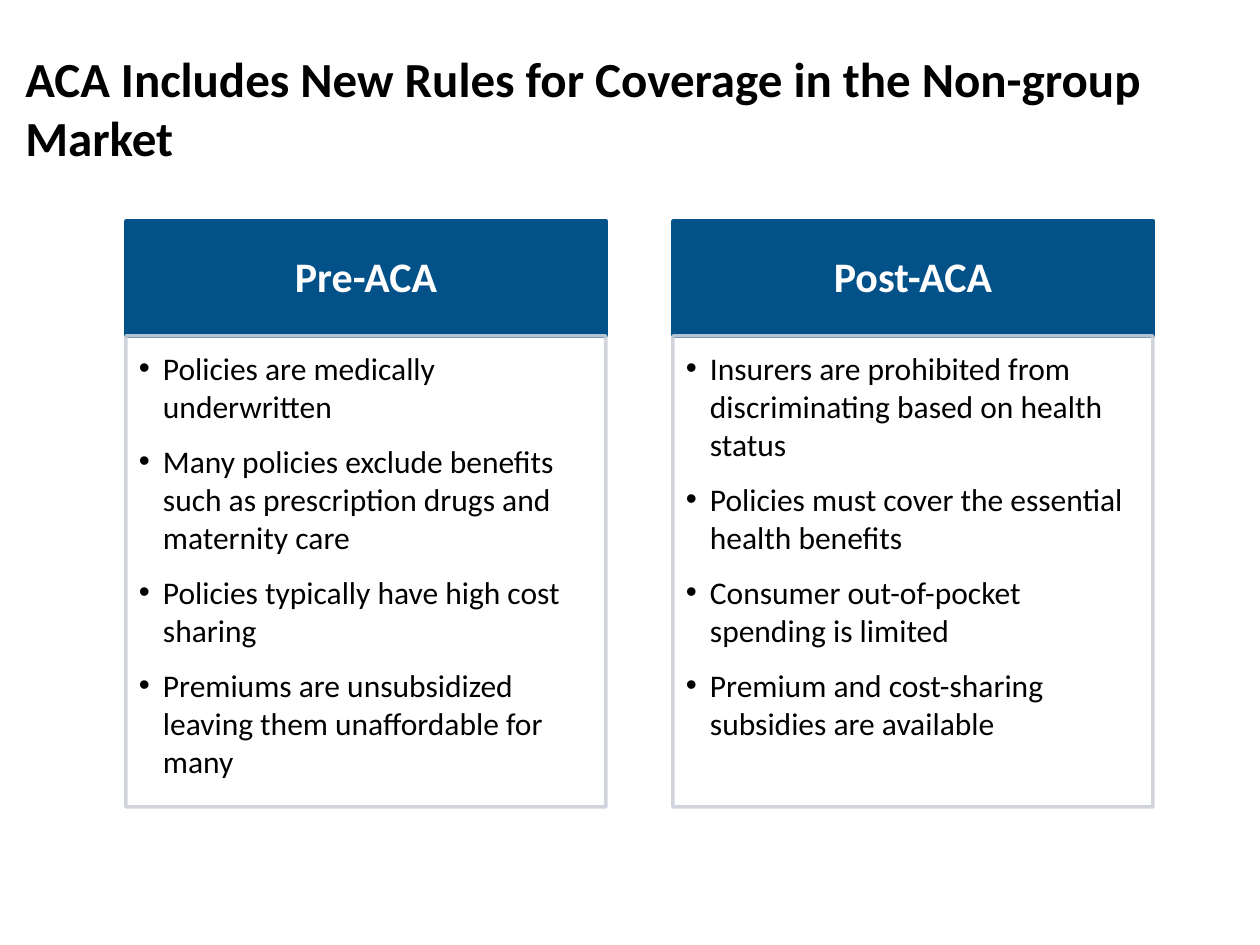
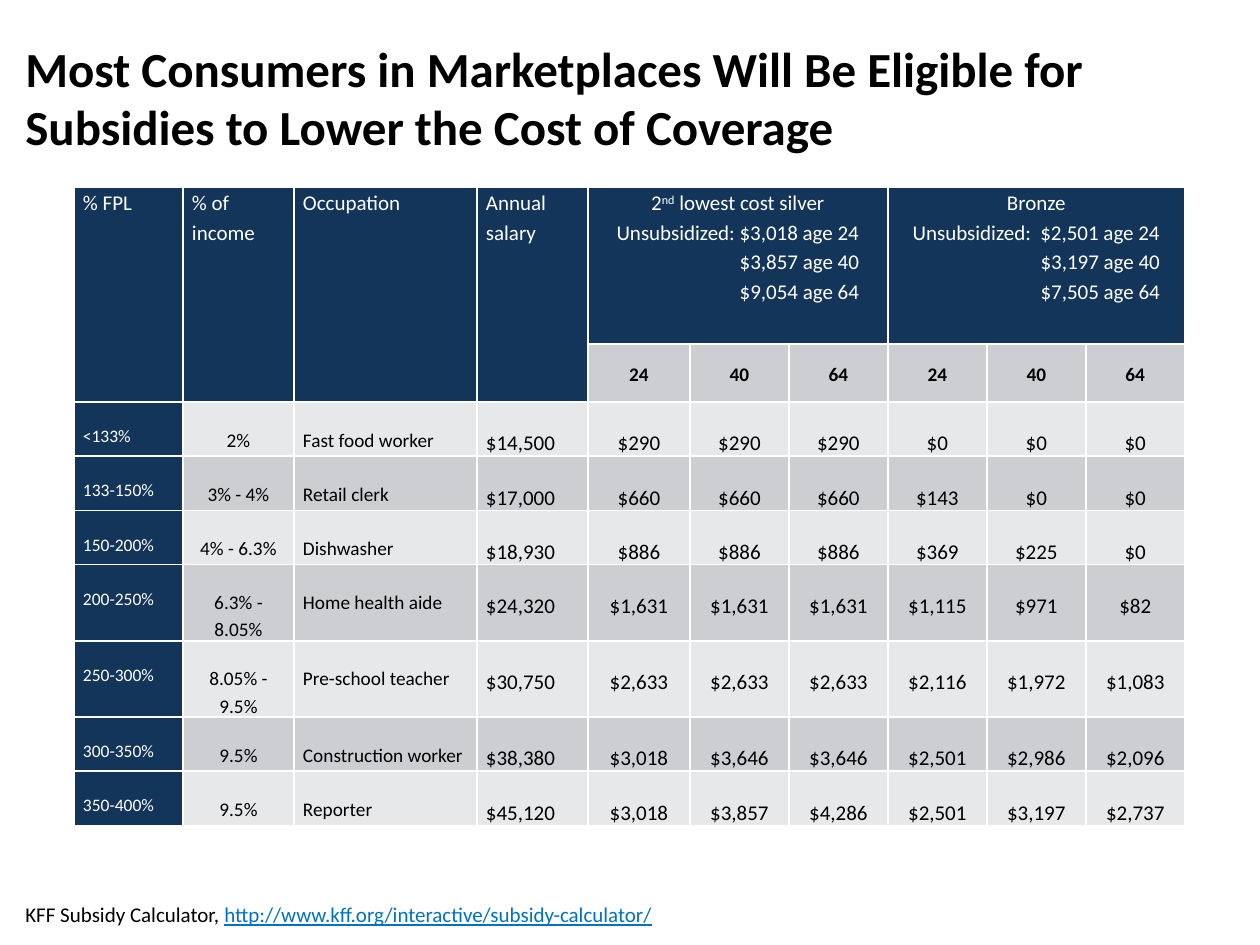
from itertools import zip_longest
from lxml.etree import SubElement
from pptx import Presentation
from pptx.dml.color import RGBColor
from pptx.enum.shapes import MSO_SHAPE
from pptx.enum.text import MSO_ANCHOR, PP_ALIGN
from pptx.oxml.ns import qn
from pptx.util import Pt

SCALE = 914400 / 126
FONT = "Calibri"
BLACK, WHITE = "000000", "FFFFFF"
BLUE, EDGE, LINK = "025189", "CCD0DA", "0072C0"
NAVY, DARK, LIGHT = "133559", "CCCED1", "E7E8EA"
LEFT, CENTER = PP_ALIGN.LEFT, PP_ALIGN.CENTER
TOP, MIDDLE, BOTTOM = MSO_ANCHOR.TOP, MSO_ANCHOR.MIDDLE, MSO_ANCHOR.BOTTOM

CARDS = [
    ("Pre-ACA", [
        "Policies are medically underwritten",
        "Many policies exclude benefits such as prescription drugs and maternity care",
        "Policies typically have high cost sharing",
        "Premiums are unsubsidized leaving them unaffordable for many"]),
    ("Post-ACA", [
        "Insurers are prohibited from discriminating based on health status",
        "Policies must cover the essential health benefits",
        "Consumer out-of-pocket spending is limited",
        "Premium and cost-sharing subsidies are available"]),
]
HEADS = ["% FPL", "% of income", "Occupation", "Annual salary"]
PLANS = [
    (4, 123, [["2", ("nd", {"raised": True}), " lowest cost silver"],
              "Unsubsidized: $3,018 age 24", "$3,857 age 40", "$9,054 age 64"]),
    (7, 128, ["Bronze", "Unsubsidized:  $2,501 age 24", "$3,197 age 40", "$7,505 age 64"]),
]
AGES = ["24", "40", "64"] * 2
ROWS = [
    ["<133%", "2%", "Fast food worker", "$14,500",
     "$290", "$290", "$290", "$0", "$0", "$0"],
    ["133-150%", "3% - 4%", "Retail clerk", "$17,000",
     "$660", "$660", "$660", "$143", "$0", "$0"],
    ["150-200%", "4% - 6.3%", "Dishwasher", "$18,930",
     "$886", "$886", "$886", "$369", "$225", "$0"],
    ["200-250%", "6.3% - 8.05%", "Home health aide", "$24,320",
     "$1,631", "$1,631", "$1,631", "$1,115", "$971", "$82"],
    ["250-300%", "8.05% - 9.5%", "Pre-school teacher", "$30,750",
     "$2,633", "$2,633", "$2,633", "$2,116", "$1,972", "$1,083"],
    ["300-350%", "9.5%", "Construction worker", "$38,380",
     "$3,018", "$3,646", "$3,646", "$2,501", "$2,986", "$2,096"],
    ["350-400%", "9.5%", "Reporter", "$45,120",
     "$3,018", "$3,857", "$4,286", "$2,501", "$3,197", "$2,737"],
]
WIDTHS = [109, 111, 183, 111, 102] + [99] * 5
HEIGHTS = [157, 58, 54, 54, 54, 76, 76, 54, 54]


def px(length):
    """Turn pixels into EMU."""
    return round(length * SCALE)


def rgb(color):
    """Turn a hex string into a colour."""
    return RGBColor.from_string(color)


def inset(holder, left, top, right, bottom):
    """Set the four inner margins of a frame or cell."""
    holder.margin_left, holder.margin_top = px(left), px(top)
    holder.margin_right, holder.margin_bottom = px(right), px(bottom)


def write(frame, lines, size=12, color=BLACK, bold=False, align=LEFT,
          space=None, after=0, bullet=0, indents=()):
    """Fill a frame with paragraphs, each a string or a list of runs."""
    for order, (line, indent) in enumerate(zip_longest(lines, indents, fillvalue=0)):
        para = frame.add_paragraph() if order else frame.paragraphs[0]
        props = para._p.get_or_add_pPr()
        if bullet or indent:
            props.set("marL", str(px(bullet or indent)))
        if bullet:
            props.set("indent", str(-px(bullet)))
            SubElement(props, qn("a:buFont")).set("typeface", "Arial")
            SubElement(props, qn("a:buChar")).set("char", "•")
        para.alignment, para.space_after = align, Pt(after)
        para.line_spacing = space
        for part in [line] if isinstance(line, str) else line:
            words, extra = (part, {}) if isinstance(part, str) else part
            run = para.add_run()
            run.text = words
            font = run.font
            font.name, font.size, font.bold = FONT, Pt(size), bold
            font.color.rgb = rgb(extra.get("color", color))
            if extra.get("under"):
                font.underline = True
            if extra.get("raised"):
                run._r.get_or_add_rPr().set("baseline", "30000")


def add_text(slide, box, lines, anchor=TOP, **style):
    """Add a wrapped text box."""
    frame = slide.shapes.add_textbox(*map(px, box)).text_frame
    frame.word_wrap, frame.vertical_anchor = True, anchor
    write(frame, lines, **style)


def add_title(slide, top, title):
    """Add the slide title."""
    add_text(slide, (13, top, 1235, 126), [title], size=28, bold=True)


def add_panel(slide, box, lines, edge, fill=None, alpha=100, anchor=TOP,
              margins=(13, 13, 18, 20), **style):
    """Add an outlined rectangle holding text."""
    panel = slide.shapes.add_shape(MSO_SHAPE.RECTANGLE, *map(px, box))
    panel.shadow.inherit = False
    if fill:
        panel.fill.solid()
        panel.fill.fore_color.rgb = rgb(fill)
    else:
        panel.fill.background()
    panel.line.color.rgb, panel.line.width = rgb(edge), Pt(2)
    if alpha < 100:
        tint = panel.line._ln.find(".//" + qn("a:srgbClr"))
        SubElement(tint, qn("a:alpha")).set("val", str(alpha * 1000))
    frame = panel.text_frame
    frame.word_wrap, frame.vertical_anchor = True, anchor
    inset(frame, *margins)
    write(frame, lines, **style)


def add_card(slide, left, head, points):
    """Add a heading band above a bulleted panel."""
    add_panel(slide, (left, 221, 480, 115), [head], BLUE, fill=BLUE, anchor=MIDDLE,
              margins=(24, 14, 24, 14), size=24, color=WHITE, bold=True,
              align=CENTER, space=0.9)
    add_panel(slide, (left, 336, 480, 471), points, EDGE, alpha=90,
              size=18, after=10, bullet=24)


def set_cell(cell, lines, fill, top=0, anchor=TOP, **style):
    """Fill a table cell and rule it in white."""
    inset(cell, 9, top, 9, 0)
    cell.vertical_anchor = anchor
    props = cell._tc.get_or_add_tcPr()
    for side in ("lnL", "lnR", "lnT", "lnB"):
        rule = SubElement(props, qn("a:" + side), w=str(Pt(1)))
        paint = SubElement(rule, qn("a:solidFill"))
        SubElement(paint, qn("a:srgbClr")).set("val", WHITE)
    cell.fill.solid()
    cell.fill.fore_color.rgb = rgb(fill)
    write(cell.text_frame, lines, space=1.15, **style)


def add_costs(slide):
    """Add the table of premiums by income and age."""
    table = slide.shapes.add_table(len(HEIGHTS), len(WIDTHS), px(74), px(187),
                                   px(sum(WIDTHS)), px(sum(HEIGHTS))).table
    for column, width in zip(table.columns, WIDTHS):
        column.width = px(width)
    for row, height in zip(table.rows, HEIGHTS):
        row.height = px(height)
    for col, head in enumerate(HEADS):
        table.cell(0, col).merge(table.cell(1, col))
        set_cell(table.cell(0, col), [head], NAVY, color=WHITE)
    for col, shift, lines in PLANS:
        table.cell(0, col).merge(table.cell(0, col + 2))
        set_cell(table.cell(0, col), lines, NAVY, color=WHITE, align=CENTER,
                 indents=(0, 0, shift, shift))
    for col, age in enumerate(AGES, len(HEADS)):
        set_cell(table.cell(1, col), [age], DARK, anchor=MIDDLE,
                 size=11, bold=True, align=CENTER)
    for row, values in enumerate(ROWS, 2):
        band = DARK if row % 2 else LIGHT
        for col, value in enumerate(values):
            size = (10, 11, 11)[col] if col < 3 else 12
            set_cell(table.cell(row, col), [value], band if col else NAVY,
                     top=size * 2.1, size=size, color=BLACK if col else WHITE,
                     align=LEFT if col in (0, 2, 3) else CENTER)


def main():
    """Build both slides and save them."""
    deck = Presentation()
    deck.slide_width, deck.slide_height = px(1260), px(945)
    rules, costs = [deck.slides.add_slide(deck.slide_layouts[6]) for _ in range(2)]

    for order, (head, points) in enumerate(CARDS):
        add_card(rules, 126 + 547 * order, head, points)
    add_title(rules, 42, "ACA Includes New Rules for Coverage in the Non-group Market")

    add_costs(costs)
    link = ("http://www.kff.org/interactive/subsidy-calculator/",
            {"color": LINK, "under": True})
    add_text(costs, (13, 857, 1147, 76), [["KFF Subsidy Calculator, ", link]], anchor=BOTTOM)
    add_title(costs, 32, "Most Consumers in Marketplaces Will Be Eligible for "
                         "Subsidies to Lower the Cost of Coverage")
    deck.save("out.pptx")


if __name__ == "__main__":
    main()
